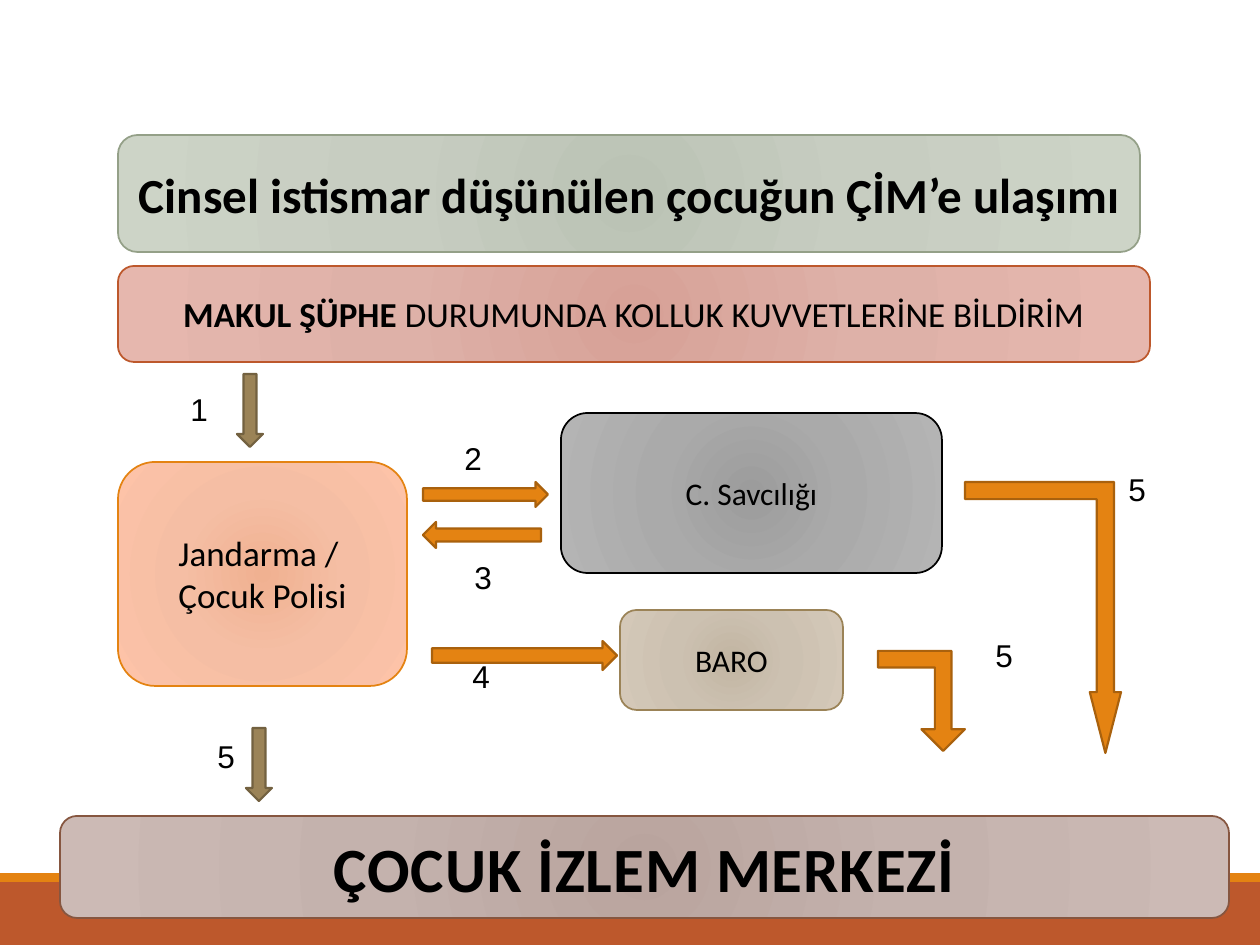
from dataclasses import dataclass

from pptx import Presentation
from pptx.dml.color import RGBColor
from pptx.enum.shapes import MSO_SHAPE as Shape
from pptx.enum.text import MSO_ANCHOR as Anchor, MSO_AUTO_SIZE as AutoSize, PP_ALIGN as Align
from pptx.oxml import parse_xml
from pptx.oxml.ns import nsdecls, qn
from pptx.util import Emu, Pt

PX = 914400 / 126
TITLE_ONLY = 5


@dataclass(frozen=True)
class Theme:
    font: str = "Calibri"
    label_font: str = "Arial"
    text: str = "000000"
    band: str = "BD582C"
    band_edge: str = "E48312"
    brown: tuple = ("9B8357", "736140")
    orange: tuple = ("E48312", "A9610D")
    green_panel: tuple = ("BBC3B5", "C7CDC1", "CDD4C7", "94A088")
    red_panel: tuple = ("D7A197", "DEB1A8", "E6B7AE", "BD582C")
    rust_panel: tuple = ("B9A49E", "C4B2AD", "CCBAB5", "865640")
    peach_panel: tuple = ("F0B191", "F5BEA4", "FDC3A8", "E48312")
    gray_panel: tuple = ("9C9C9C", "AAAAAA", "B4B4B4", "000000")
    sand_panel: tuple = ("C2B5A2", "CCC1B1", "D4C8B8", "9B8357")
    panel_line: float = 1
    arrow_line: float = 1.25
    center_size: int = 36
    title_size: int = 28
    step_size: int = 20
    small_size: int = 18


THEME = Theme()


def px(*values):
    return [Emu(round(value * PX)) for value in values]


def rgb(value):
    return RGBColor.from_string(value)


def add_shape(slide, kind, box, fill, line=None, width=1):
    shape = slide.shapes.add_shape(kind, *px(*box))
    shape.shadow.inherit = False
    shape.fill.solid()
    shape.fill.fore_color.rgb = rgb(fill)
    if line:
        shape.line.color.rgb = rgb(line)
        shape.line.width = Pt(width)
    else:
        shape.line.fill.background()
    return shape


def format_run(run, size, bold=False, font=THEME.font):
    run.font.name = font
    run.font.size = Pt(size)
    run.font.bold = bold
    run.font.color.rgb = rgb(THEME.text)


def write_centered(shape, text, size, bold=False):
    frame = shape.text_frame
    frame.text = text
    frame.word_wrap = True
    frame.vertical_anchor = Anchor.MIDDLE
    for paragraph in frame.paragraphs:
        paragraph.alignment = Align.CENTER
        for run in paragraph.runs:
            format_run(run, size, bold)


def add_panel(slide, box, colors, text="", size=THEME.small_size, bold=False):
    *stops, line = colors
    shape = add_shape(slide, Shape.ROUNDED_RECTANGLE, box, stops[0], line, THEME.panel_line)
    stop_xml = "".join(
        f'<a:gs pos="{position}000"><a:srgbClr val="{color}"/></a:gs>'
        for position, color in zip((0, 45, 100), stops)
    )
    gradient = parse_xml(
        f'<a:gradFill {nsdecls("a")} rotWithShape="1"><a:gsLst>{stop_xml}</a:gsLst>'
        '<a:path path="circle"><a:fillToRect l="100000" t="100000" r="100000" b="100000"/>'
        "</a:path></a:gradFill>"
    )
    properties = shape._element.spPr
    properties.replace(properties.find(qn("a:solidFill")), gradient)
    if text:
        write_centered(shape, text, size, bold)
    return shape


def add_title(slide, box, text):
    add_panel(slide, box, THEME.green_panel)
    title = slide.shapes.title
    title.left, title.top, title.width, title.height = px(*box)
    write_centered(title, text, THEME.title_size, True)
    title.text_frame.auto_size = AutoSize.NONE
    slide.shapes._spTree.append(title._element)


def add_arrow(slide, kind, box, colors, adjustments=()):
    arrow = add_shape(slide, kind, box, *colors, THEME.arrow_line)
    for index, value in enumerate(adjustments):
        arrow.adjustments[index] = value
    if kind == Shape.BENT_UP_ARROW:
        arrow._element.spPr.xfrm.set("flipV", "1")


def add_label(slide, text, left, top):
    frame = slide.shapes.add_textbox(*px(left, top, 43, 50)).text_frame
    frame.text = text
    frame.word_wrap = False
    frame.auto_size = AutoSize.SHAPE_TO_FIT_TEXT
    format_run(frame.paragraphs[0].runs[0], THEME.small_size, font=THEME.label_font)


def add_panels(slide):
    notice = add_panel(slide, (118, 266, 1032, 96), THEME.red_panel, "MAKUL ŞÜPHE ", THEME.step_size, True)
    run = notice.text_frame.paragraphs[0].add_run()
    run.text = "DURUMUNDA KOLLUK KUVVETLERİNE BİLDİRİM"
    format_run(run, THEME.step_size)

    add_title(slide, (118, 135, 1022, 117), "Cinsel istismar düşünülen çocuğun ÇİM’e ulaşımı")

    center = add_panel(slide, (60, 816, 1169, 102), THEME.rust_panel, "ÇOCUK İZLEM MERKEZİ", THEME.center_size, True)
    center.text_frame.paragraphs[0].runs[0].font._element.set("spc", "50")

    add_panel(slide, (118, 462, 289, 224), THEME.peach_panel, "Jandarma / \nÇocuk Polisi", THEME.step_size)
    add_panel(slide, (561, 413, 381, 160), THEME.gray_panel, "C. Savcılığı")
    add_panel(slide, (620, 610, 223, 100), THEME.sand_panel, "BARO")


def add_arrows(slide):
    for left, top in ((237, 374), (246, 728)):
        add_arrow(slide, Shape.DOWN_ARROW, (left, top, 26, 73), THEME.brown)
    for kind, box, adjustments in (
        (Shape.RIGHT_ARROW, (423, 482, 125, 25), ()),
        (Shape.LEFT_ARROW, (423, 522, 118, 26), ()),
        (Shape.RIGHT_ARROW, (432, 641, 185, 29), ()),
        (Shape.BENT_UP_ARROW, (878, 651, 87, 100), (0.19, 0.25, 0.25)),
        (Shape.BENT_UP_ARROW, (965, 482, 156, 271), (0.11, 0.1, 0.39)),
    ):
        add_arrow(slide, kind, box, THEME.orange, adjustments)


def add_labels(slide):
    for text, left, top in (
        ("1", 178, 384),
        ("2", 452, 433),
        ("3", 462, 552),
        ("4", 460, 651),
        ("5", 1116, 464),
        ("5", 983, 630),
        ("5", 205, 731),
    ):
        add_label(slide, text, left, top)


def main():
    presentation = Presentation()
    presentation.slide_width, presentation.slide_height = px(1260, 945)
    slide = presentation.slides.add_slide(presentation.slide_layouts[TITLE_ONLY])
    add_shape(slide, Shape.RECTANGLE, (0, 882, 1260, 63), THEME.band)
    add_shape(slide, Shape.RECTANGLE, (0, 873, 1260, 9), THEME.band_edge)
    add_panels(slide)
    add_arrows(slide)
    add_labels(slide)
    presentation.save("out.pptx")


if __name__ == "__main__":
    main()
